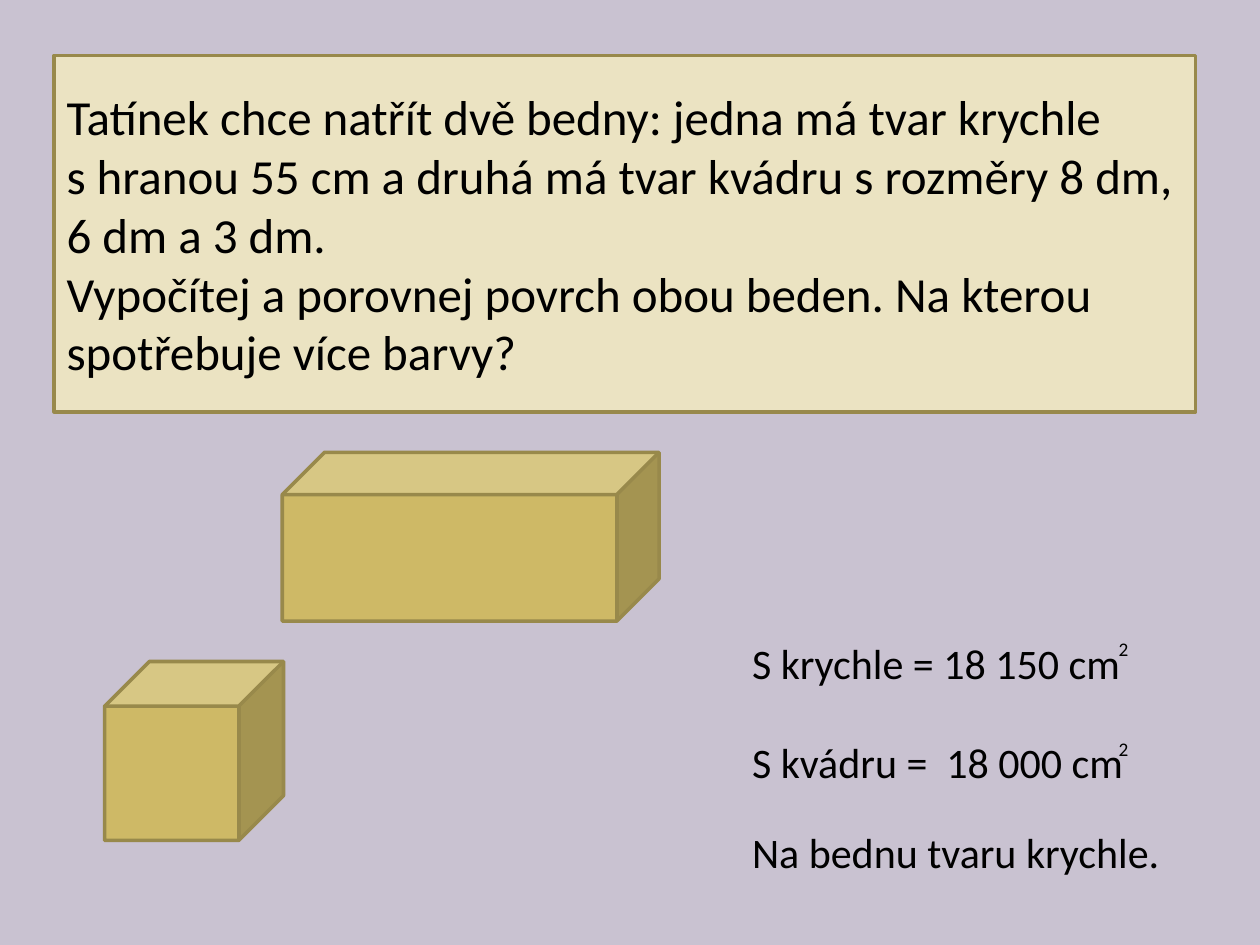
from dataclasses import dataclass

from pptx import Presentation
from pptx.dml.color import RGBColor
from pptx.enum.shapes import MSO_SHAPE
from pptx.enum.text import MSO_ANCHOR, MSO_AUTO_SIZE, PP_ALIGN
from pptx.util import Inches, Pt

LAVENDER = RGBColor(0xC9, 0xC2, 0xD1)
CREAM = RGBColor(0xEB, 0xE3, 0xC2)
GOLD = RGBColor(0xCE, 0xB9, 0x66)
BRONZE = RGBColor(0x98, 0x89, 0x4B)
BLACK = RGBColor(0, 0, 0)

ANSWER_LEFT, ANSWER_WIDTH, ANSWER_HEIGHT = 5.87, 3.78, 0.5
EXPONENT_LEFT, EXPONENT_WIDTH, EXPONENT_HEIGHT = 8.78, 0.47, 0.29

TASK_LINES = [
    "Tatínek chce natřít dvě bedny: jedna má tvar krychle",
    "s hranou 55 cm a druhá má tvar kvádru s rozměry 8 dm,",
    "6 dm a 3 dm.",
    "Vypočítej a porovnej povrch obou beden. Na kterou spotřebuje více barvy?",
]


@dataclass
class Box:
    left: float
    top: float
    width: float
    height: float

    def lengths(self):
        return [Inches(v) for v in (self.left, self.top, self.width, self.height)]


@dataclass
class Answer:
    top: float
    text: str
    exponent: str = ""


TASK_PANEL = Box(0.43, 0.44, 9.06, 2.83)
CRATES = [Box(0.83, 5.25, 1.42, 1.42), Box(2.24, 3.59, 2.99, 1.34)]
ANSWERS = [
    Answer(5.01, "S krychle = 18 150 cm", "2"),
    Answer(5.8, "S kvádru =  18 000 cm", "2"),
    Answer(6.51, "Na bednu tvaru krychle."),
]


def write_lines(frame, lines: list[str], size: float) -> None:
    frame.word_wrap = True
    for index, line in enumerate(lines):
        paragraph = frame.paragraphs[0] if index == 0 else frame.add_paragraph()
        paragraph.alignment = PP_ALIGN.LEFT
        run = paragraph.add_run()
        run.text = line
        for name, value in {"name": "Calibri", "size": Pt(size)}.items():
            setattr(run.font, name, value)
        run.font.color.rgb = BLACK


def add_outlined(slide, kind: MSO_SHAPE, box: Box, fill: RGBColor):
    shape = slide.shapes.add_shape(kind, *box.lengths())
    shape.shadow.inherit = False
    shape.fill.solid()
    shape.fill.fore_color.rgb = fill
    shape.line.color.rgb = BRONZE
    shape.line.width = Pt(2)
    return shape


def add_label(slide, box: Box, text: str, size: float) -> None:
    frame = slide.shapes.add_textbox(*box.lengths()).text_frame
    write_lines(frame, [text], size)
    frame.auto_size = MSO_AUTO_SIZE.SHAPE_TO_FIT_TEXT


def add_answer(slide, answer: Answer) -> None:
    box = Box(ANSWER_LEFT, answer.top, ANSWER_WIDTH, ANSWER_HEIGHT)
    add_label(slide, box, answer.text, 24)
    if answer.exponent:
        box = Box(EXPONENT_LEFT, answer.top, EXPONENT_WIDTH, EXPONENT_HEIGHT)
        add_label(slide, box, answer.exponent, 11)


def main() -> None:
    presentation = Presentation()
    presentation.slide_width = Inches(10)
    presentation.slide_height = Inches(7.5)
    slide = presentation.slides.add_slide(presentation.slide_layouts[6])
    slide.background.fill.solid()
    slide.background.fill.fore_color.rgb = LAVENDER

    # Word problem
    panel = add_outlined(slide, MSO_SHAPE.RECTANGLE, TASK_PANEL, CREAM)
    panel.text_frame.vertical_anchor = MSO_ANCHOR.MIDDLE
    write_lines(panel.text_frame, TASK_LINES, 28)

    # The two crates
    for crate in CRATES:
        add_outlined(slide, MSO_SHAPE.CUBE, crate, GOLD)

    # Results
    for answer in ANSWERS:
        add_answer(slide, answer)

    presentation.save("out.pptx")


if __name__ == "__main__":
    main()
